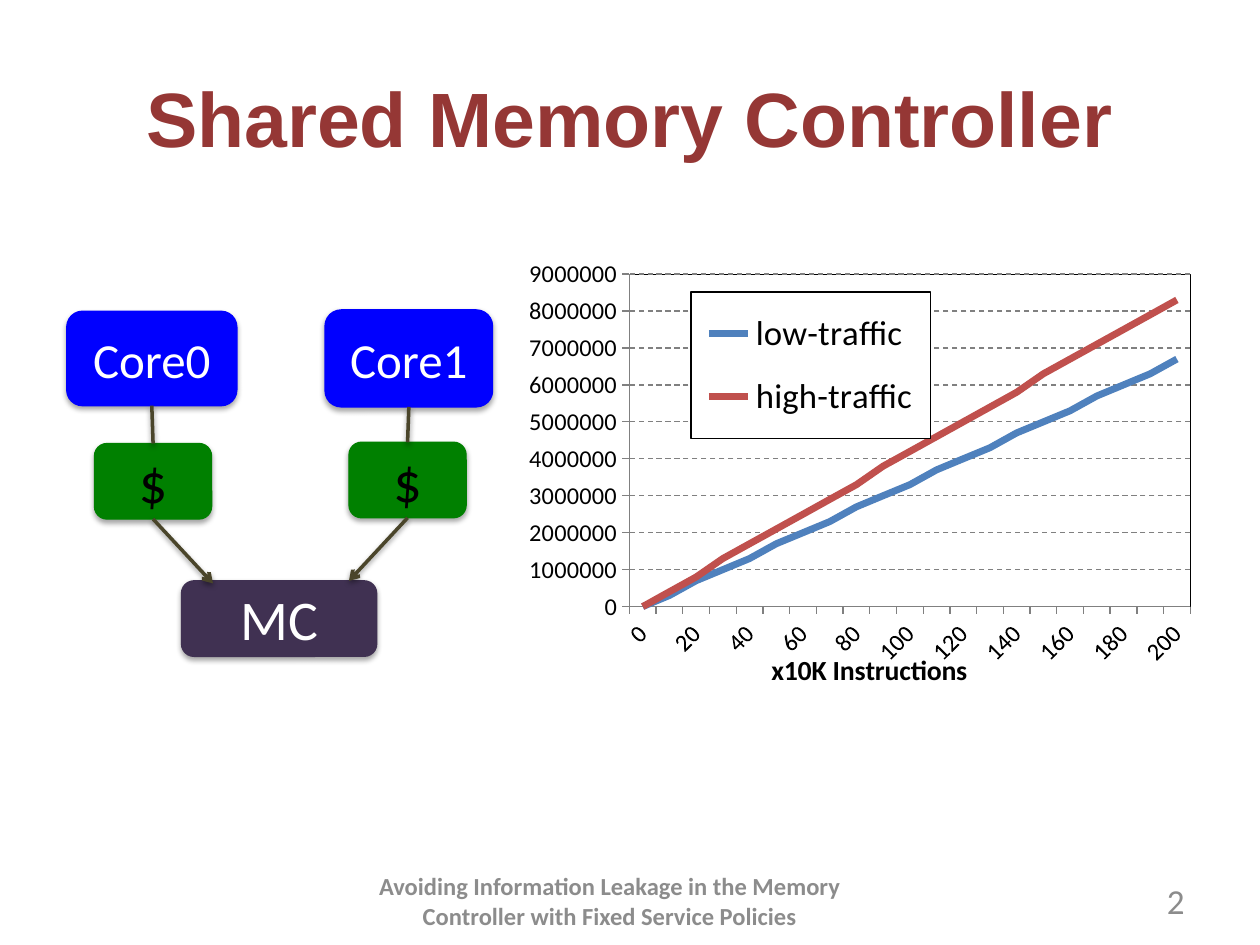
from dataclasses import dataclass

from pptx import Presentation
from pptx.chart.data import CategoryChartData
from pptx.dml.color import RGBColor
from pptx.enum.chart import XL_CHART_TYPE, XL_LEGEND_POSITION, XL_TICK_MARK
from pptx.enum.dml import MSO_LINE
from pptx.enum.shapes import MSO_CONNECTOR, MSO_SHAPE
from pptx.enum.text import MSO_ANCHOR, PP_ALIGN
from pptx.oxml import parse_xml
from pptx.oxml.ns import nsdecls, qn
from pptx.util import Inches, Pt

FONT = "Calibri"
BLUE, GREEN, PLUM, OLIVE = "0000FF", "008000", "403152", "4A452A"
GREY = "8C8C8C"
# Cycle counts in units of 100 000, one per ten steps
LOW = [0, 3, 7, 10, 13, 17, 20, 23, 27, 30, 33, 37, 40, 43, 47, 50, 53, 57, 60, 63, 67]
HIGH = [0, 4, 8, 13, 17, 21, 25, 29, 33, 38, 42, 46, 50, 54, 58, 63, 67, 71, 75, 79, 83]


@dataclass
class Box:
    text: str
    left: float
    top: float
    width: float
    height: float
    fill: str
    size: int = 32
    color: str = "FFFFFF"


@dataclass
class Chain:
    core: Box
    cache: Box
    end: tuple[float, float]


CHAINS = [
    Chain(Box("Core0", 0.53, 2.47, 1.35, 0.75, BLUE, 28),
          Box("$", 0.75, 3.52, 0.93, 0.6, GREEN, color="000000"), (1.69, 4.63)),
    Chain(Box("Core1", 2.58, 2.46, 1.33, 0.77, BLUE, 28),
          Box("$", 2.77, 3.51, 0.93, 0.6, GREEN, color="000000"), (2.77, 4.61)),
]
MEMORY = Box("MC", 1.44, 4.61, 1.55, 0.6, PLUM)


def rgb(code: str) -> RGBColor:
    return RGBColor.from_string(code)


def write(frame, text: str, size: int, color: str, font: str = FONT,
          bold: bool = False, align=PP_ALIGN.CENTER) -> None:
    frame.word_wrap = True
    frame.vertical_anchor = MSO_ANCHOR.MIDDLE
    para = frame.paragraphs[0]
    para.alignment = align
    run = para.add_run()
    run.text = text
    run.font.size, run.font.name, run.font.bold = Pt(size), font, bold
    run.font.color.rgb = rgb(color)


def shade(shape, alpha: int, dist: float) -> None:
    """Give a shape a soft shadow that falls straight down."""
    shape._element.spPr.append(parse_xml(
        f'<a:effectLst {nsdecls("a")}><a:outerShdw blurRad="{Pt(3.1)}" '
        f'dist="{Pt(dist)}" dir="5400000" rotWithShape="0"><a:srgbClr val="000000">'
        f'<a:alpha val="{alpha * 1000}"/></a:srgbClr></a:outerShdw></a:effectLst>'))


def draw(slide, box: Box):
    shape = slide.shapes.add_shape(
        MSO_SHAPE.ROUNDED_RECTANGLE, Inches(box.left), Inches(box.top),
        Inches(box.width), Inches(box.height))
    shape.fill.solid()
    shape.fill.fore_color.rgb = shape.line.color.rgb = rgb(box.fill)
    shape.line.width = Pt(0.75)
    shade(shape, 35, 1.8)
    write(shape.text_frame, box.text, box.size, box.color)
    return shape


def link(slide, start, end, arrow: bool = False) -> None:
    """Join the bottom of a shape to a point or to the top of a shape."""
    x, y = (0, 0) if not arrow else end
    line = slide.shapes.add_connector(
        MSO_CONNECTOR.STRAIGHT, 0, 0, Inches(x), Inches(y))
    line.begin_connect(start, 2)
    if not arrow:
        line.end_connect(end, 0)
    line.line.color.rgb = rgb(OLIVE)
    line.line.width = Pt(2)
    if arrow:
        line.line._get_or_add_ln().append(
            parse_xml(f'<a:tailEnd {nsdecls("a")} type="arrow"/>'))
    shade(line, 38, 1.6)


def label(slide, left: float, top: float, width: float, height: float,
          text: str, **style) -> None:
    box = slide.shapes.add_textbox(
        Inches(left), Inches(top), Inches(width), Inches(height))
    write(box.text_frame, text, **style)


def place(node, index: int, inner: bool = False, **spot: float) -> None:
    """Set the manual layout of a chart part, as fractions of the chart."""
    for old in node.findall(qn("c:layout")):
        node.remove(old)
    target = '<c:layoutTarget val="inner"/>' if inner else ""
    modes = '<c:xMode val="edge"/><c:yMode val="edge"/>'
    sizes = "".join(f'<c:{key} val="{val}"/>' for key, val in spot.items())
    node.insert(index, parse_xml(
        f'<c:layout {nsdecls("c")}><c:manualLayout>{target}{modes}{sizes}'
        '</c:manualLayout></c:layout>'))


def frame(line: str, fill: str = "FFFFFF"):
    return parse_xml(
        f'<c:spPr {nsdecls("c", "a")}><a:solidFill><a:srgbClr val="{fill}"/></a:solidFill>'
        f'<a:ln w="{Pt(0.75)}"><a:solidFill><a:srgbClr val="{line}"/></a:solidFill>'
        '</a:ln></c:spPr>')


def plot(slide) -> None:
    data = CategoryChartData(number_format="General")
    data.categories = [10 * i for i in range(len(LOW))]
    for name, vals in (("low-traffic", LOW), ("high-traffic", HIGH)):
        data.add_series(name, [val * 100000 for val in vals])
    chart = slide.shapes.add_chart(
        XL_CHART_TYPE.LINE, Inches(4.2), Inches(1.96), Inches(5.47), Inches(3.57),
        data).chart
    chart.has_title = False
    chart.font.size, chart.font.name = Pt(10), FONT
    chart.font.color.rgb = rgb("000000")
    chart.plots[0].vary_by_categories = False
    for series, color in zip(chart.plots[0].series, ("4F81BD", "C0504D")):
        series.smooth = False
        series.format.line.color.rgb = rgb(color)
        series.format.line.width = Pt(4)

    # Axes
    cat, val = chart.category_axis, chart.value_axis
    for axis in (cat, val):
        axis.major_tick_mark = XL_TICK_MARK.OUTSIDE
        axis.minor_tick_mark = XL_TICK_MARK.NONE
        axis.tick_labels.font.size = Pt(14)
        axis.format.line.color.rgb = rgb("808080")
    val.minimum_scale, val.maximum_scale, val.major_unit = 0, 9000000, 1000000
    grid = val.major_gridlines.format.line
    grid.color.rgb, grid.width = rgb("808080"), Pt(0.75)
    grid.dash_style = MSO_LINE.DASH
    write(cat.axis_title.text_frame, "x10K Instructions", 16, "000000", bold=True)
    node = cat._element
    place(node.find(qn("c:title")), 1, x=0.34, y=0.9)
    node.find(qn("c:txPr")).find(qn("a:bodyPr")).set("rot", "-2700000")
    node.find(qn("c:noMultiLvlLbl")).addprevious(
        parse_xml(f'<c:tickLblSkip {nsdecls("c")} val="2"/>'))

    # Legend, plot area and outer border
    chart.has_legend = True
    legend = chart.legend
    legend.position = XL_LEGEND_POSITION.RIGHT
    legend.include_in_layout = True
    legend.font.size = Pt(20)
    place(legend._element, 1, x=0.23, y=0.1, w=0.35, h=0.33)
    legend._element.find(qn("c:overlay")).addnext(frame("000000"))
    whole = chart._chartSpace.find(qn("c:chart"))
    area = whole.find(qn("c:plotArea"))
    place(area, 0, inner=True, x=0.14, y=0.06, w=0.82, h=0.75)
    area.append(frame("000000"))
    whole.addnext(frame("FFFFFF"))


def main() -> None:
    deck = Presentation()
    deck.slide_width, deck.slide_height = Inches(10), Inches(7.5)
    slide = deck.slides.add_slide(deck.slide_layouts[5])

    # Title
    title = slide.shapes.title
    title.left, title.top = Inches(0.5), Inches(0.3)
    title.width, title.height = Inches(9), Inches(1.25)
    write(title.text_frame, "Shared Memory Controller", 44, "953735", "Arial", True)

    # Cores and caches above the memory controller
    draw(slide, MEMORY)
    for chain in CHAINS:
        core, cache = draw(slide, chain.core), draw(slide, chain.cache)
        link(slide, core, cache)
        link(slide, cache, chain.end, arrow=True)

    plot(slide)

    # Footer and slide number
    label(slide, 2.86, 6.95, 3.96, 0.4,
          "Avoiding Information Leakage in the Memory Controller with Fixed Service Policies",
          size=14, color=GREY, bold=True)
    label(slide, 7.17, 6.95, 2.33, 0.4, "2", size=20, color=GREY, align=PP_ALIGN.RIGHT)
    deck.save("out.pptx")


if __name__ == "__main__":
    main()
